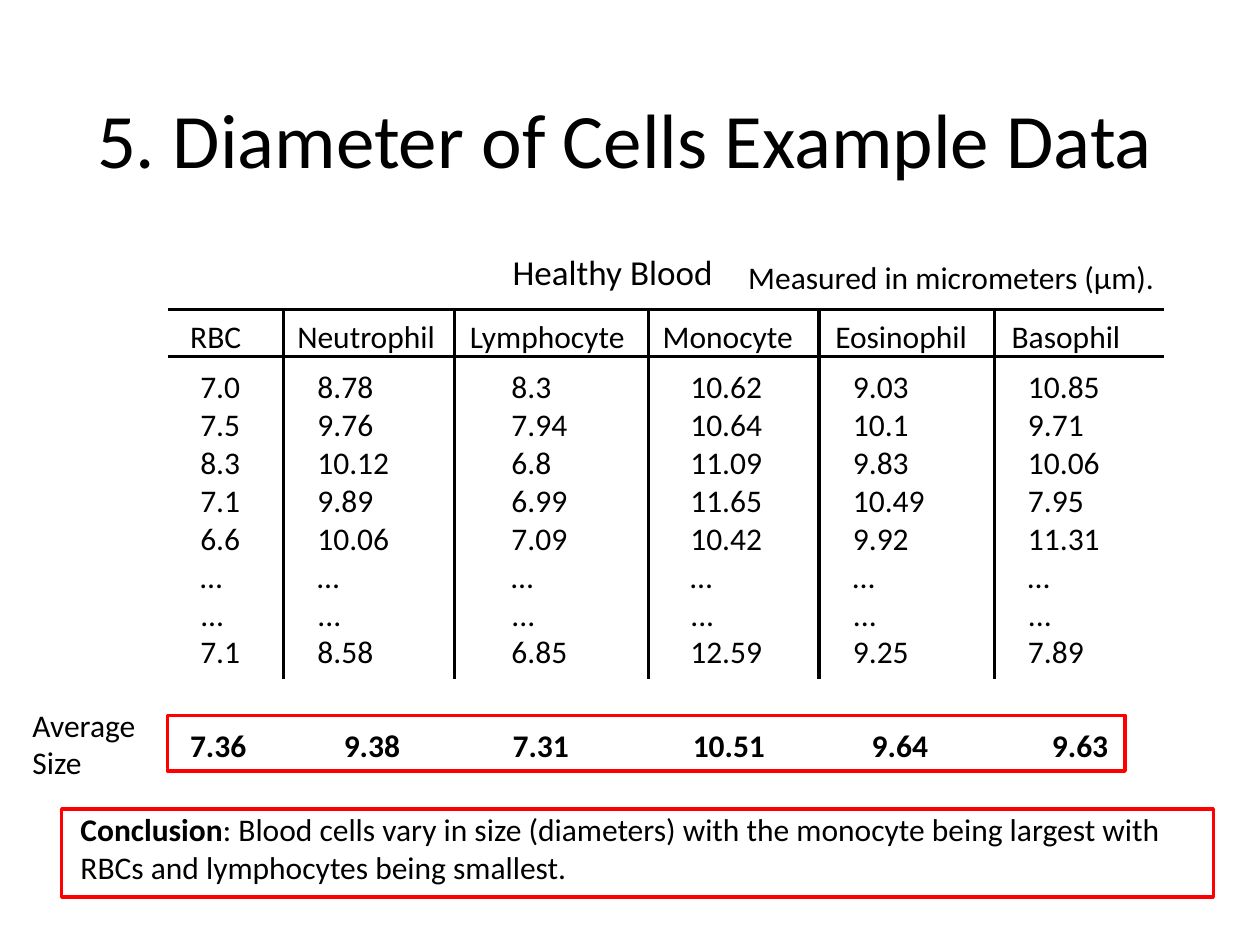
from dataclasses import dataclass
from itertools import accumulate

from lxml import etree
from pptx import Presentation
from pptx.dml.color import RGBColor
from pptx.enum.shapes import MSO_CONNECTOR, MSO_SHAPE
from pptx.enum.text import MSO_ANCHOR, PP_ALIGN
from pptx.oxml.ns import qn
from pptx.util import Inches, Pt

RECT = MSO_SHAPE.RECTANGLE
STRAIGHT = MSO_CONNECTOR.STRAIGHT
MIDDLE, BOTTOM = MSO_ANCHOR.MIDDLE, MSO_ANCHOR.BOTTOM
LEFT = PP_ALIGN.LEFT


@dataclass(frozen=True)
class Theme:
    font: str = "Calibri"
    ink: str = "000000"
    accent: str = "FF0000"
    title: int = 44
    subtitle: int = 20
    body: int = 18
    rule: float = 1.75
    frame: float = 2


THEME = Theme()

COLUMNS = [
    ("RBC", 0.92, 0.18, 0.26, "7.0 7.5 8.3 7.1 6.6 … ... 7.1"),
    ("Neutrophil", 1.36, 0.11, 0.27, "8.78 9.76 10.12 9.89 10.06 … ... 8.58"),
    ("Lymphocyte", 1.54, 0.12, 0.45, "8.3 7.94 6.8 6.99 7.09 … ... 6.85"),
    ("Monocyte", 1.35, 0.11, 0.33, "10.62 10.64 11.09 11.65 10.42 … ... 12.59"),
    ("Eosinophil", 1.39, 0.13, 0.27, "9.03 10.1 9.83 10.49 9.92 … ... 9.25"),
    ("Basophil", 1.35, 0.14, 0.27, "10.85 9.71 10.06 7.95 11.31 … ... 7.89"),
]
AVERAGES = [("7.36", 0.08), ("9.38", 1.3), ("7.31", 2.64),
            ("10.51", 4.07), ("9.64", 5.49), ("9.63", 6.92)]


def format_run(r, size=THEME.body, bold=False):
    r.font.name = THEME.font
    r.font.size = Pt(size)
    r.font.bold = bold
    r.font.color.rgb = RGBColor.from_string(THEME.ink)


def add_text(slide, box, text, size=THEME.body, bold=False):
    sp = slide.shapes.add_textbox(*map(Inches, box))
    tf = sp.text_frame
    tf.word_wrap = True
    tf.text = text
    format_run(tf.paragraphs[0].runs[0], size, bold)
    return sp


def add_frame(slide, box):
    sp = slide.shapes.add_shape(RECT, *map(Inches, box))
    sp.shadow.inherit = False
    sp.fill.background()
    sp.line.color.rgb = RGBColor.from_string(THEME.accent)
    sp.line.width = Pt(THEME.frame)


def add_rule(slide, x1, y1, x2, y2):
    line = slide.shapes.add_connector(STRAIGHT, *map(Inches, (x1, y1, x2, y2)))
    line.line.color.rgb = RGBColor.from_string(THEME.ink)
    line.line.width = Pt(THEME.rule)
    etree.SubElement(line._element.spPr, qn("a:effectLst"))


def add_title(slide, box):
    sp = slide.shapes.title
    sp.left, sp.top, sp.width, sp.height = map(Inches, box)
    tf = sp.text_frame
    tf.text = "5. Diameter of Cells Example Data"
    tf.vertical_anchor = MIDDLE
    p = tf.paragraphs[0]
    p.alignment = LEFT
    format_run(p.runs[0], THEME.title)


def fill_cell(cell, text, indent):
    cell.fill.background()
    cell.margin_left = Inches(indent)
    cell.margin_right = cell.margin_top = cell.margin_bottom = 0
    cell.vertical_anchor = BOTTOM
    cell.text = text
    p = cell.text_frame.paragraphs[0]
    p.alignment = LEFT
    format_run(p.runs[0])


def add_cell_table(slide, box):
    left, top, width, height = box
    heights = [0.37, 0.4] + [0.3] * 7
    table = slide.shapes.add_table(
        len(heights), len(COLUMNS), *map(Inches, box)).table
    table.first_row = table.horz_banding = False
    for row, row_height in zip(table.rows, heights):
        row.height = Inches(row_height)
    for c, (name, col_width, head_indent, indent, values) in enumerate(COLUMNS):
        table.columns[c].width = Inches(col_width)
        fill_cell(table.cell(0, c), name, head_indent)
        for r, value in enumerate(values.split(), 1):
            fill_cell(table.cell(r, c), value, indent)
    for y in (top, top + heights[0]):
        add_rule(slide, left, y, left + width, y)
    for offset in accumulate(column[1] for column in COLUMNS[:-1]):
        x = left + offset
        add_rule(slide, x, top + 0.01, x, top + 2.93)


def add_averages(slide, box):
    left, top, width, height = box
    add_text(slide, (left - 1.17, top - 0.13, 1.33, 0.71), "Average Size")
    add_frame(slide, box)
    for value, offset in AVERAGES:
        text_width = 0.9 if len(value) > 4 else 0.68
        add_text(slide, (left + offset, top + 0.03, text_width, 0.4),
                 value, bold=True)


def add_conclusion(slide, box):
    left, top, width, height = box
    sp = add_text(slide, (left + 0.05, top - 0.04, width - 0.05, height),
                  "Conclusion", bold=True)
    r = sp.text_frame.paragraphs[0].add_run()
    r.text = (": Blood cells vary in size (diameters) with the monocyte being "
              "largest with RBCs and lymphocytes being smallest.")
    format_run(r)
    add_frame(slide, box)


def main():
    prs = Presentation()
    prs.slide_width, prs.slide_height = Inches(10), Inches(7.5)
    slide = prs.slides.add_slide(prs.slide_layouts[5])
    add_title(slide, (0.67, 0.47, 9, 1.25))
    add_text(slide, (3.97, 1.94, 3.62, 0.44), "Healthy Blood", THEME.subtitle)
    add_text(slide, (5.84, 2, 4, 0.4), "Measured in micrometers (µm).")
    add_cell_table(slide, (1.33, 2.46, 7.91, 2.87))
    add_averages(slide, (1.33, 5.68, 7.6, 0.44))
    add_conclusion(slide, (0.49, 6.42, 9.14, 0.7))
    prs.save("out.pptx")


if __name__ == "__main__":
    main()
